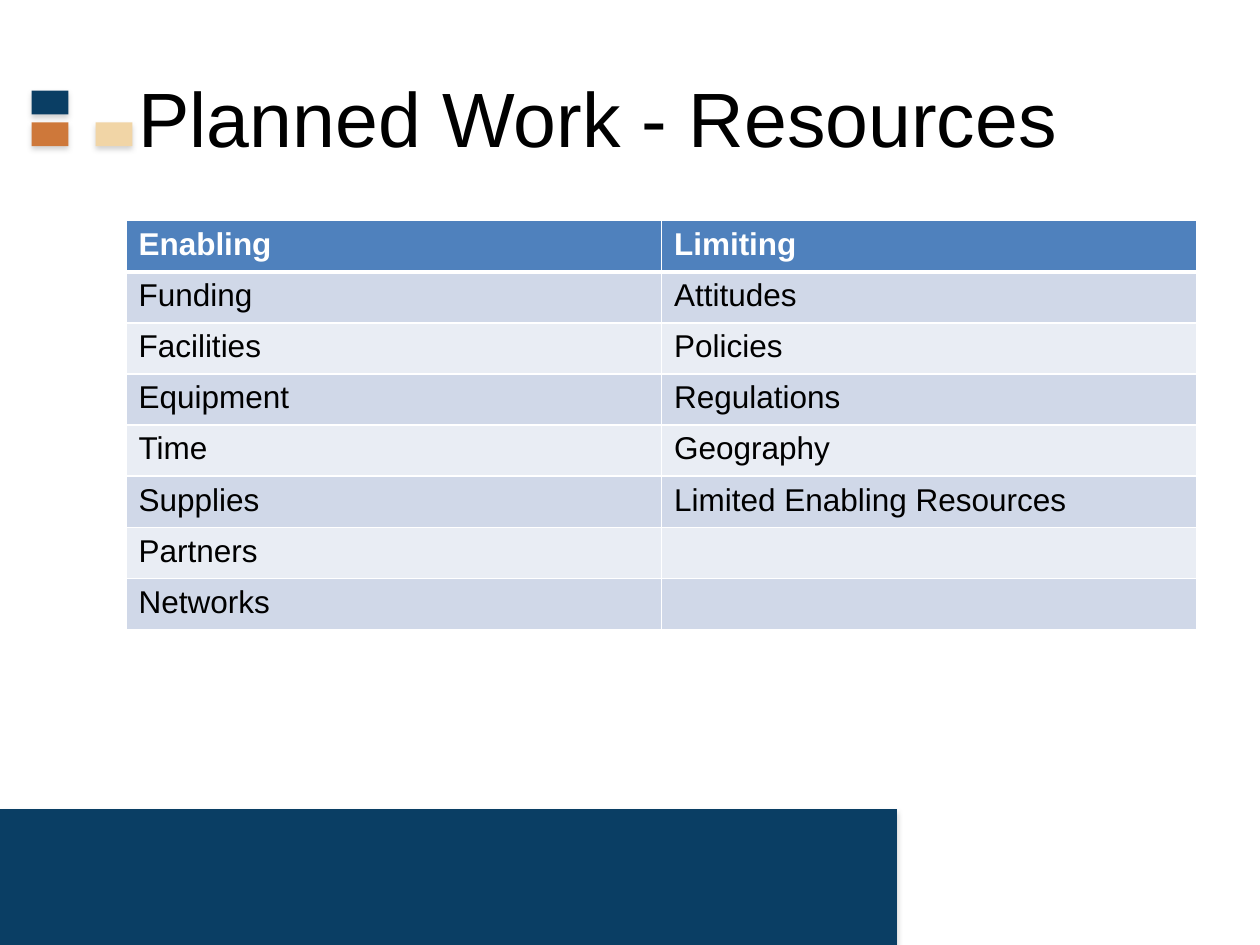
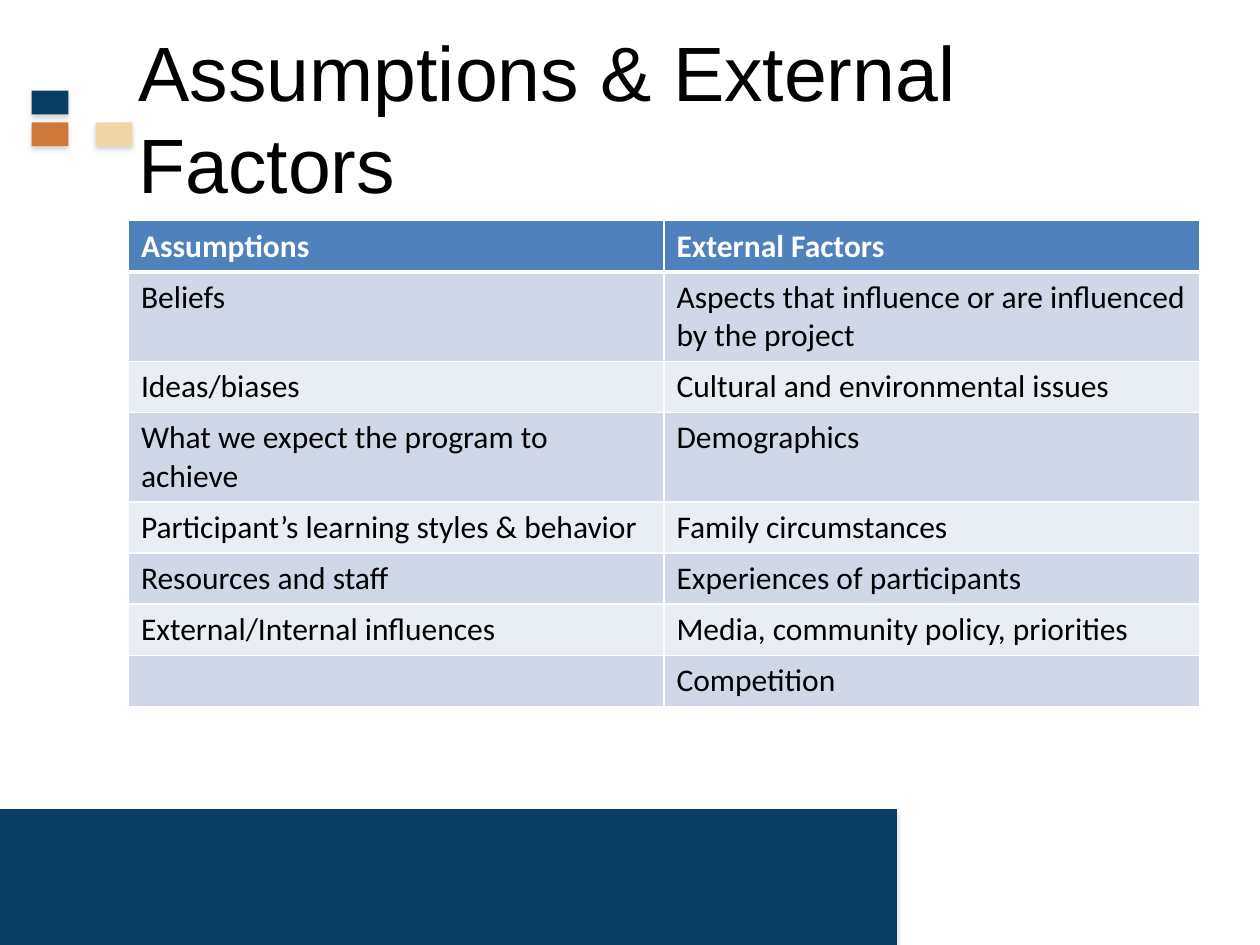
from lxml.etree import SubElement
from pptx import Presentation
from pptx.dml.color import RGBColor
from pptx.enum.shapes import MSO_SHAPE as Preset
from pptx.enum.text import MSO_ANCHOR as Anchor, MSO_AUTO_SIZE as AutoSize, PP_ALIGN as Align
from pptx.oxml.ns import qn
from pptx.util import Cm, Pt

NAVY, ORANGE, SAND = "0A3E64", "CE783A", "F1D5A6"
BLACK, WHITE, SHADE = "000000", "FFFFFF", "808080"
HEADER, STRIPES = "4F81BD", ("D0D8E8", "E9EDF4")

TITLE_BOX = (2.54, 0.76, 21.59, 3.18)
MOTIF_BOX = (0.64, 1.83, 2.03, 1.12)
BAND_BOX = (0, 16.31, 18.08, 2.74)
TABLE_WIDTH = 21.59
LINE_ROW, DOUBLE_ROW = 1.03, 1.78

RESOURCES = [
    ("Enabling", "Limiting"),
    ("Funding", "Attitudes"),
    ("Facilities", "Policies"),
    ("Equipment", "Regulations"),
    ("Time", "Geography"),
    ("Supplies", "Limited Enabling Resources"),
    ("Partners", ""),
    ("Networks", ""),
]
FACTORS = [
    ("Assumptions", "External Factors"),
    ("Beliefs", "Aspects that influence or are influenced by the project"),
    ("Ideas/biases", "Cultural and environmental issues"),
    ("What we expect the program to achieve", "Demographics"),
    ("Participant’s learning styles & behavior", "Family circumstances"),
    ("Resources and staff", "Experiences of participants"),
    ("External/Internal influences", "Media, community policy, priorities"),
    ("", "Competition"),
]


def color(hex_code):
    return RGBColor.from_string(hex_code)


def lengths(box):
    return [Cm(value) for value in box]


def add_text(paragraph, text, font_name, size, hex_code, bold=False):
    run = paragraph.add_run()
    run.text = text
    run.font.name = font_name
    run.font.size = Pt(size)
    run.font.bold = bold
    run.font.color.rgb = color(hex_code)


def add_shadow(block):
    block.shadow.inherit = False
    effects = block._element.spPr.find(qn("a:effectLst"))
    shadow = SubElement(effects, qn("a:outerShdw"), blurRad=str(Pt(3.1)),
                        dist=str(Pt(1.8)), dir="5400000", rotWithShape="0")
    shade = SubElement(shadow, qn("a:srgbClr"), val=SHADE)
    SubElement(shade, qn("a:alpha"), val="35000")


def add_block(slide, box, hex_code):
    block = slide.shapes.add_shape(Preset.RECTANGLE, *lengths(box))
    block.fill.solid()
    block.fill.fore_color.rgb = color(hex_code)
    block.line.fill.background()
    add_shadow(block)


def add_motif(slide, box):
    left, top, width, height = box
    tile_width, tile_height = 0.74, 0.48
    for column, row, hex_code in ((0, 0, NAVY), (0, 1, ORANGE), (1, 1, SAND)):
        x = left + column * (width - tile_width)
        y = top + row * (height - tile_height)
        add_block(slide, (x, y, tile_width, tile_height), hex_code)


def add_title(slide, box, text):
    title = slide.shapes.title
    title.left, title.top, title.width, title.height = lengths(box)
    frame = title.text_frame
    frame.word_wrap = True
    frame.auto_size = AutoSize.NONE
    frame.vertical_anchor = Anchor.MIDDLE
    heading = frame.paragraphs[0]
    heading.alignment = Align.LEFT
    add_text(heading, text, "Arial", 44, BLACK)


def set_borders(cell, row):
    properties = cell._tc.get_or_add_tcPr()
    weights = {"L": 1, "R": 1, "T": 3 if row == 1 else 1, "B": 3 if row == 0 else 1}
    for side, points in weights.items():
        border = SubElement(properties, qn(f"a:ln{side}"), w=str(Pt(points)))
        fill = SubElement(border, qn("a:solidFill"))
        SubElement(fill, qn("a:srgbClr"), val=WHITE)


def fill_cell(cell, row, text, font_name):
    set_borders(cell, row)
    cell.fill.solid()
    cell.fill.fore_color.rgb = color(STRIPES[(row - 1) % 2] if row else HEADER)
    if text:
        add_text(cell.text_frame.paragraphs[0], text, font_name, 18,
                 BLACK if row else WHITE, bold=row == 0)


def add_comparison(slide, left, top, entries, font_name, double_rows):
    heights = [DOUBLE_ROW if row in double_rows else LINE_ROW for row in range(len(entries))]
    box = (left, top, TABLE_WIDTH, sum(heights))
    comparison = slide.shapes.add_table(len(entries), 2, *lengths(box)).table
    for column in comparison.columns:
        column.width = Cm(TABLE_WIDTH / 2)
    for row, (pair, height) in enumerate(zip(entries, heights)):
        comparison.rows[row].height = Cm(height)
        for column, text in enumerate(pair):
            fill_cell(comparison.cell(row, column), row, text, font_name)


def add_comparison_slide(deck, title, entries, font_name, left, double_rows=()):
    slide = deck.slides.add_slide(deck.slide_layouts[5])
    add_block(slide, BAND_BOX, NAVY)
    add_motif(slide, MOTIF_BOX)
    add_title(slide, TITLE_BOX, title)
    add_comparison(slide, left, 4.45, entries, font_name, double_rows)


def main():
    deck = Presentation()
    deck.slide_width, deck.slide_height = Cm(25.4), Cm(19.05)
    add_comparison_slide(deck, "Planned Work - Resources", RESOURCES, "Arial", 2.54)
    add_comparison_slide(deck, "Assumptions & External Factors", FACTORS, "Calibri", 2.59,
                         double_rows=(1, 3))
    deck.save("out.pptx")


if __name__ == "__main__":
    main()
